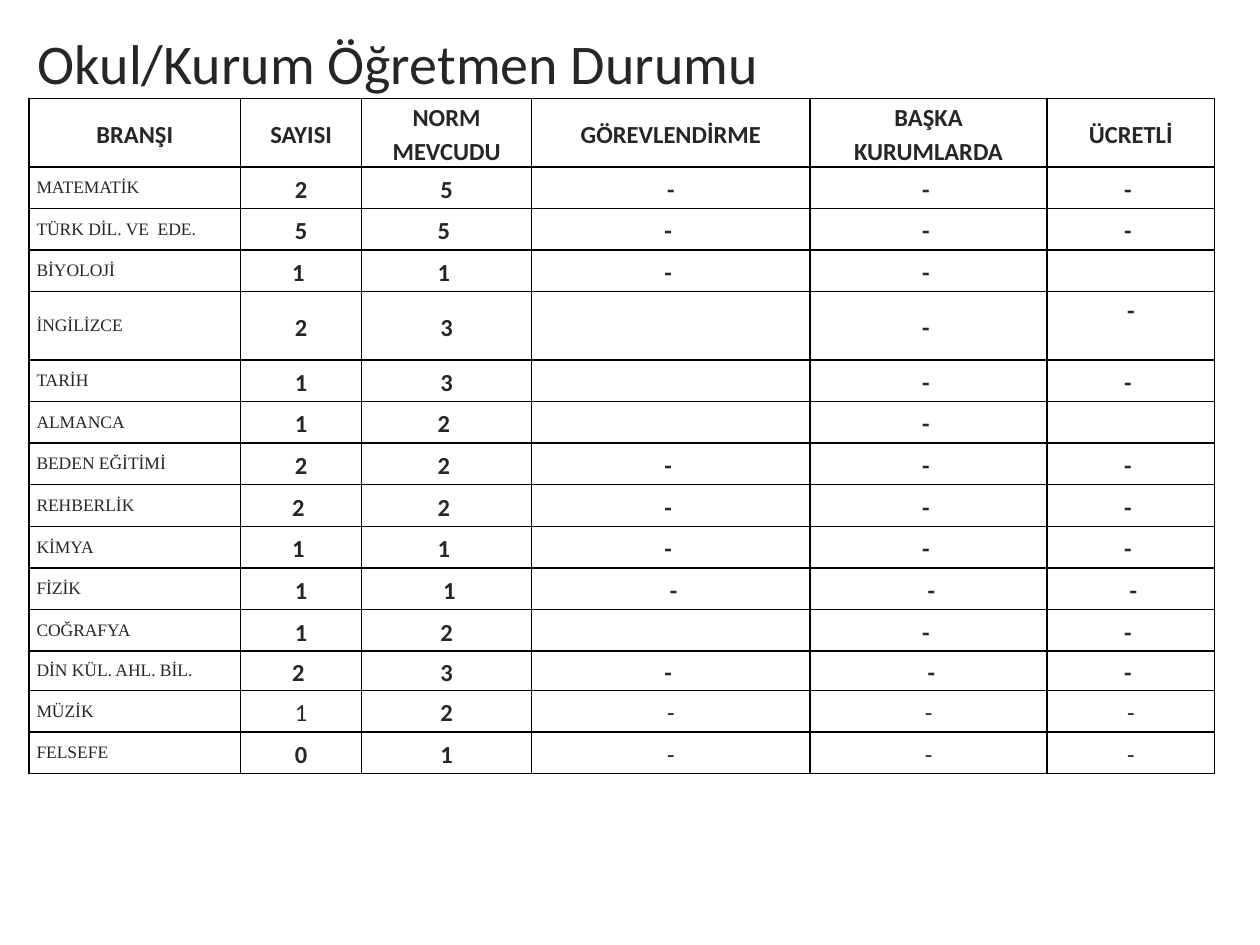
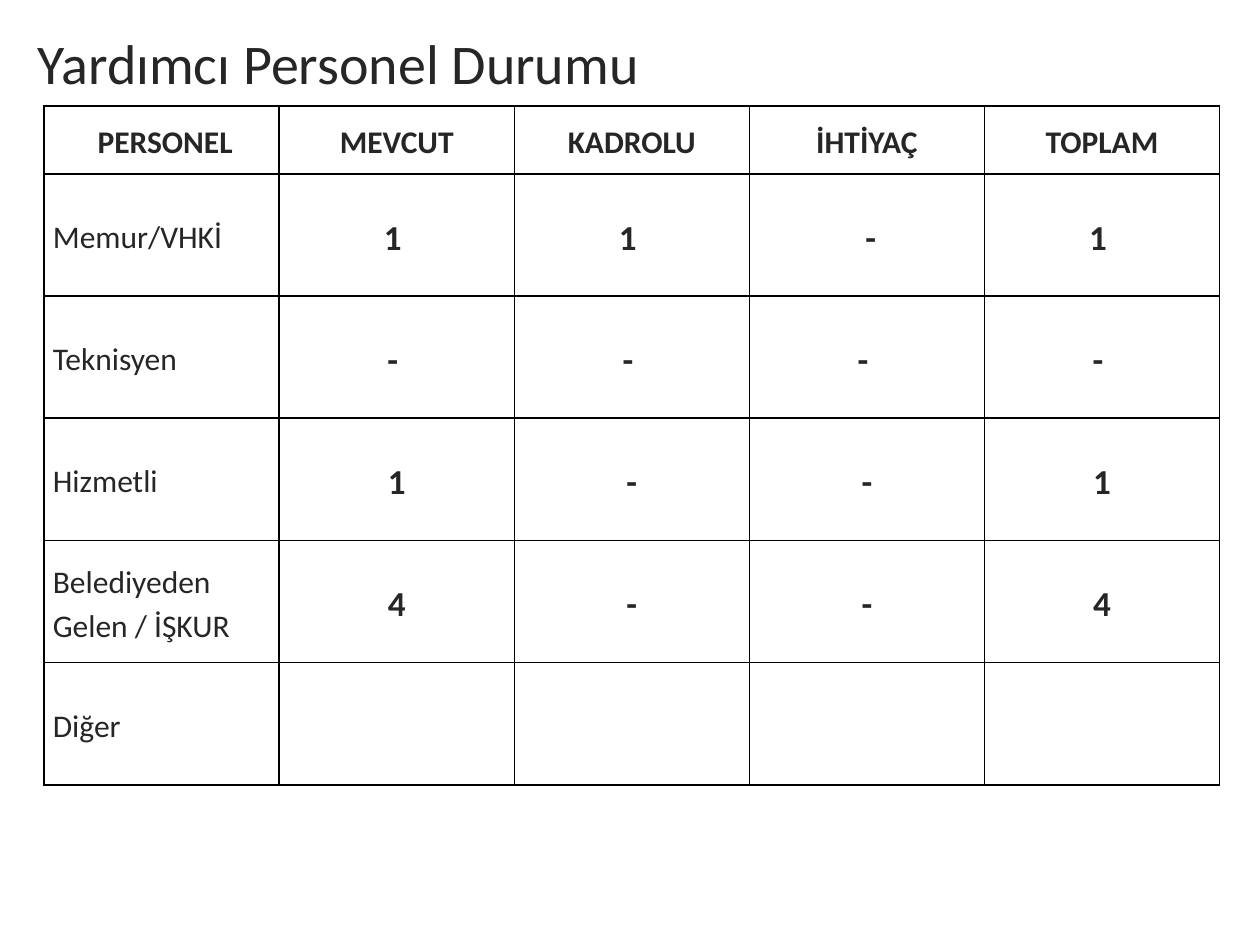
from dataclasses import dataclass

import lxml.etree
import pptx
import pptx.dml.color
import pptx.enum.text
import pptx.oxml.ns
import pptx.util

Align = pptx.enum.text.PP_ALIGN
Anchor = pptx.enum.text.MSO_ANCHOR
NBSP = chr(160)  # written as "~" in the table values below


@dataclass(frozen=True)
class Theme:
    text: str = "262626"
    border: str = "000000"
    border_points: float = 1
    font: str = "Calibri"
    title_size: float = 32
    line_spacing: float = 1.15
    title_space_after: float = 10


@dataclass(frozen=True)
class Area:
    """Place and size in percent of the slide's width and height."""
    left: float
    top: float
    width: float
    height: float


@dataclass(frozen=True)
class TextStyle:
    size: float
    bold: bool = False
    align: Align = Align.CENTER
    font: str = "Calibri"
    spacing: float = 1.15


@dataclass(frozen=True)
class Row:
    """One table row; light and raised list columns set regular or at the top."""
    cells: tuple[str, ...]
    weight: int
    light: tuple[int, ...] = ()
    raised: tuple[int, ...] = ()


@dataclass(frozen=True)
class StatusPage:
    title: str
    area: Area
    columns: tuple[int, ...]
    rows: tuple[Row, ...]
    header: TextStyle
    label: TextStyle
    value: TextStyle
    side_margin: float


THEME = Theme()
SLIDE_WIDTH = pptx.util.Inches(10)
SLIDE_HEIGHT = pptx.util.Inches(7.5)
TITLE_AREA = Area(2, 1.07, 94.7, 10)
NORMAL, TALL, LOW = 33, 54, 31

TEACHERS = StatusPage(
    title="Okul/Kurum Öğretmen Durumu",
    area=Area(2.3, 10.4, 94.1, 71.47),
    columns=(168, 96, 135, 221, 188, 133),
    rows=(
        Row(("BRANŞI", "SAYISI", "NORM\nMEVCUDU", "GÖREVLENDİRME",
             "BAŞKA KURUMLARDA", "ÜCRETLİ"), TALL),
        Row(("MATEMATİK", "2", "5", "-", "-~", "-~"), NORMAL),
        Row(("TÜRK DİL. VE  EDE.", "5", "5~", "-~", "-~", "-~"), NORMAL),
        Row(("BİYOLOJİ", "1~", "1~", "-~", "-~", ""), NORMAL),
        Row(("İNGİLİZCE", "2", "3", "", "-~", "-"), TALL, raised=(5,)),
        Row(("TARİH", "1", "3", "", "-~", "-~"), NORMAL),
        Row(("ALMANCA", " 1~", "2~", "", "-~", ""), NORMAL),
        Row(("BEDEN EĞİTİMİ", "2", "2~", "-~", "-~", "-~"), NORMAL),
        Row(("REHBERLİK", "2~", "2~", "-~", "-~", "-~"), NORMAL),
        Row(("KİMYA", "1~", "1~", "-~", "-~", "-~"), NORMAL),
        Row(("FİZİK", "1", "~1", "~-", "~-", "~-"), NORMAL),
        Row(("COĞRAFYA", "1", "2", "", "-~", "-~"), NORMAL),
        Row(("DİN KÜL. AHL. BİL.", "2~", "3", "-~", "~-", "-~"), LOW),
        Row(("MÜZİK", "1", "2", "-", "-", "-"), NORMAL, light=(1, 3, 4, 5)),
        Row(("FELSEFE", "0", "1", "-", "-", "-"), NORMAL, light=(3, 4, 5)),
    ),
    header=TextStyle(14, bold=True),
    label=TextStyle(10, align=Align.LEFT, font="Times New Roman", spacing=1),
    value=TextStyle(14, bold=True),
    side_margin=0.06,
)

SUPPORT_STAFF = StatusPage(
    title="Yardımcı Personel Durumu",
    area=Area(3.5, 11.2, 93.3, 71.87),
    columns=(1,) * 5,
    rows=(
        Row(("~PERSONEL", "MEVCUT", "KADROLU", "İHTİYAÇ", "TOPLAM"), 54),
        Row(("Memur/VHKİ", "1~", "1~", "~-", "1~"), 97),
        Row(("Teknisyen", "-~", "-~", "-~", "-~"), 97),
        Row(("Hizmetli", "1", "-", "-", "1"), 97),
        Row(("Belediyeden Gelen / İŞKUR", "4", "-", "-", "4"), 97),
        Row(("Diğer", "", "", "", ""), 97),
    ),
    header=TextStyle(18, bold=True),
    label=TextStyle(18, align=Align.LEFT),
    value=TextStyle(20, bold=True),
    side_margin=0.07,
)


def to_lengths(area: Area) -> tuple[int, int, int, int]:
    return (int(SLIDE_WIDTH * area.left / 100), int(SLIDE_HEIGHT * area.top / 100),
            int(SLIDE_WIDTH * area.width / 100), int(SLIDE_HEIGHT * area.height / 100))


def share_out(total: int, weights: tuple[int, ...]) -> list[int]:
    """Split a length in proportion to the weights."""
    return [int(total * weight / sum(weights)) for weight in weights]


def format_paragraph(para, style: TextStyle, bold: bool) -> None:
    para.alignment = style.align
    para.line_spacing = style.spacing
    para.font.name = style.font
    para.font.size = pptx.util.Pt(style.size)
    para.font.bold = bold
    para.font.color.rgb = pptx.dml.color.RGBColor.from_string(THEME.text)


def add_borders(cell) -> None:
    """Draw all four sides; border elements must precede the cell's fill."""
    qn = pptx.oxml.ns.qn
    properties = cell._tc.get_or_add_tcPr()
    for position, side in enumerate(("lnL", "lnR", "lnT", "lnB")):
        line = lxml.etree.Element(qn(f"a:{side}"))
        line.set("w", str(int(pptx.util.Pt(THEME.border_points))))
        fill = lxml.etree.SubElement(line, qn("a:solidFill"))
        lxml.etree.SubElement(fill, qn("a:srgbClr")).set("val", THEME.border)
        properties.insert(position, line)


def fill_cell(cell, text: str, style: TextStyle, bold: bool, raised: bool,
              side_margin: float) -> None:
    cell.text = text.replace("~", NBSP)
    cell.vertical_anchor = Anchor.TOP if raised else Anchor.MIDDLE
    cell.margin_left = cell.margin_right = pptx.util.Inches(side_margin)
    cell.margin_top = cell.margin_bottom = 0
    for para in cell.text_frame.paragraphs:
        format_paragraph(para, style, bold)
    cell.fill.background()
    add_borders(cell)


def set_title(slide, text: str) -> None:
    title = slide.shapes.title
    title.left, title.top, title.width, title.height = to_lengths(TITLE_AREA)
    frame = title.text_frame
    frame.text = text
    frame.word_wrap = True
    frame.auto_size = pptx.enum.text.MSO_AUTO_SIZE.NONE
    frame.vertical_anchor = Anchor.MIDDLE
    para = frame.paragraphs[0]
    style = TextStyle(THEME.title_size, align=Align.LEFT, font=THEME.font,
                      spacing=THEME.line_spacing)
    format_paragraph(para, style, bold=False)
    para.space_after = pptx.util.Pt(THEME.title_space_after)


def add_status_table(slide, page: StatusPage) -> None:
    left, top, width, height = to_lengths(page.area)
    table = slide.shapes.add_table(len(page.rows), len(page.columns),
                                   left, top, width, height).table
    table.first_row = table.horz_banding = False
    for column, length in zip(table.columns, share_out(width, page.columns)):
        column.width = length
    weights = tuple(row.weight for row in page.rows)
    for table_row, length in zip(table.rows, share_out(height, weights)):
        table_row.height = length
    for row_index, row in enumerate(page.rows):
        for column_index, text in enumerate(row.cells):
            if row_index == 0:
                style = page.header
            else:
                style = page.label if column_index == 0 else page.value
            fill_cell(table.cell(row_index, column_index), text, style,
                      bold=style.bold and column_index not in row.light,
                      raised=column_index in row.raised,
                      side_margin=page.side_margin)


def main() -> None:
    deck = pptx.Presentation()
    deck.slide_width, deck.slide_height = SLIDE_WIDTH, SLIDE_HEIGHT
    title_only = deck.slide_layouts.get_by_name("Title Only")
    for page in (TEACHERS, SUPPORT_STAFF):
        slide = deck.slides.add_slide(title_only)
        set_title(slide, page.title)
        add_status_table(slide, page)
    deck.save("out.pptx")


if __name__ == "__main__":
    main()
